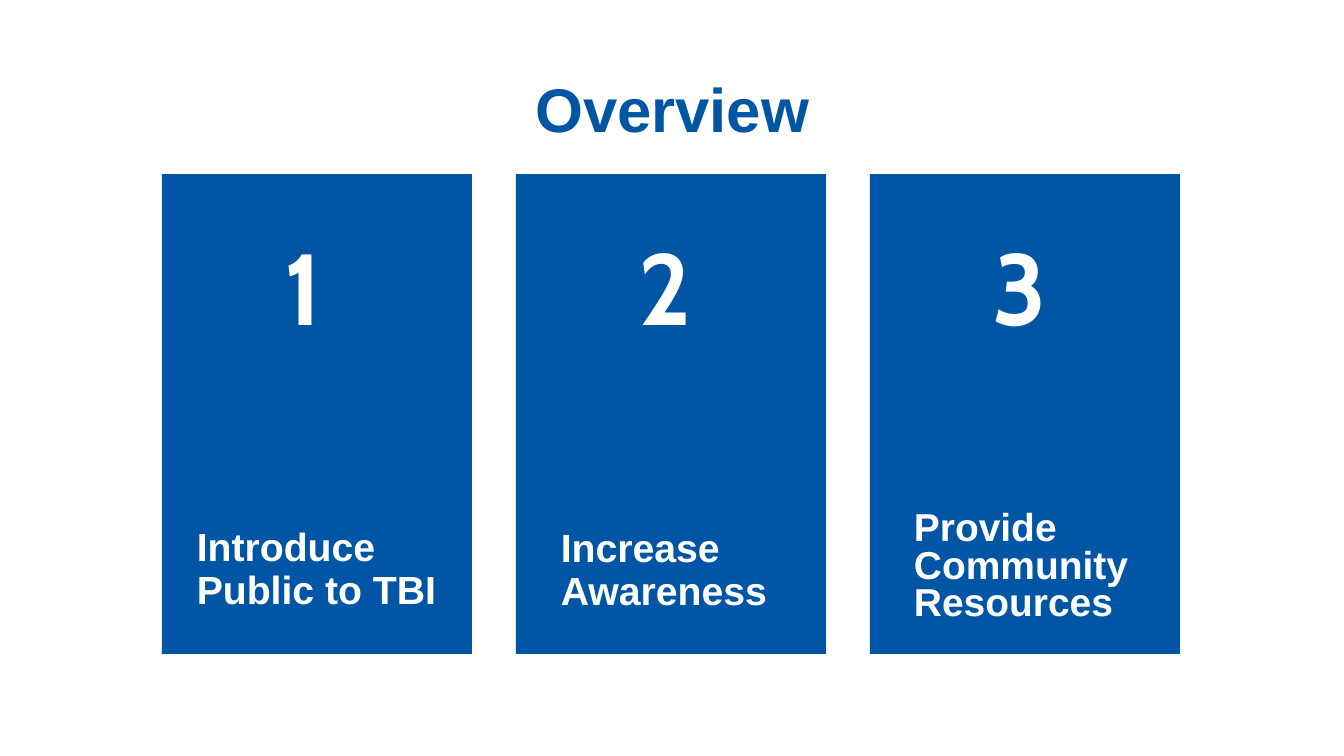
"""Build the overview slide: a title above three numbered cards."""
from pptx import Presentation, util as u
from pptx.dml.color import RGBColor
from pptx.enum import shapes, text

PX = 9071.43
HUE = {"blue": "0055A5", "white": "FFFFFF"}


def px(*vals):
    return [u.Emu(round(v * PX)) for v in vals]


def write(box, words, size, hue, face="Arial", gap=0.9, align="LEFT", anchor="TOP"):
    label = slide.shapes.add_textbox(*px(*box))
    frame = label.text_frame
    frame.word_wrap = True
    frame.vertical_anchor = getattr(text.MSO_ANCHOR, anchor)
    para = frame.paragraphs[0]
    para.line_spacing = gap
    para.alignment = getattr(text.PP_ALIGN, align)
    run = para.add_run()
    run.text = words
    look = {"name": face, "size": u.Pt(size), "bold": True}
    for key, val in look.items():
        setattr(run.font, key, val)
    run.font.color.rgb = RGBColor.from_string(HUE[hue])


deck = Presentation()
deck.slide_width, deck.slide_height = px(1344, 756)
slide = deck.slides.add_slide(deck.slide_layouts[6])

write((93, 40, 1159, 146), "Overview", 44, "blue", align="CENTER", anchor="MIDDLE")

LEFT, STEP = 162, 354
cards = [
    ("Introduce Public to TBI", (187, 523, 260, 100), 28, 0.9),
    ("Increase Awareness", (551, 524, 240, 99), 28, 0.9),
    ("Provide Community Resources", (904, 507, 241, 133), 27.8, 0.8),
]
for i, (words, box, size, gap) in enumerate(cards):
    x = LEFT + i * STEP
    card = slide.shapes.add_shape(shapes.MSO_SHAPE.RECTANGLE, *px(x, 174, 310, 480))
    card.shadow.inherit = False
    card.fill.solid()
    card.fill.fore_color.rgb = RGBColor.from_string(HUE["blue"])
    card.line.fill.background()
    write((x + 113, 233, 85, 114), str(i + 1), 72, "white", face="Cabin")
    write(box, words, size, "white", gap=gap)

deck.save("out.pptx")
